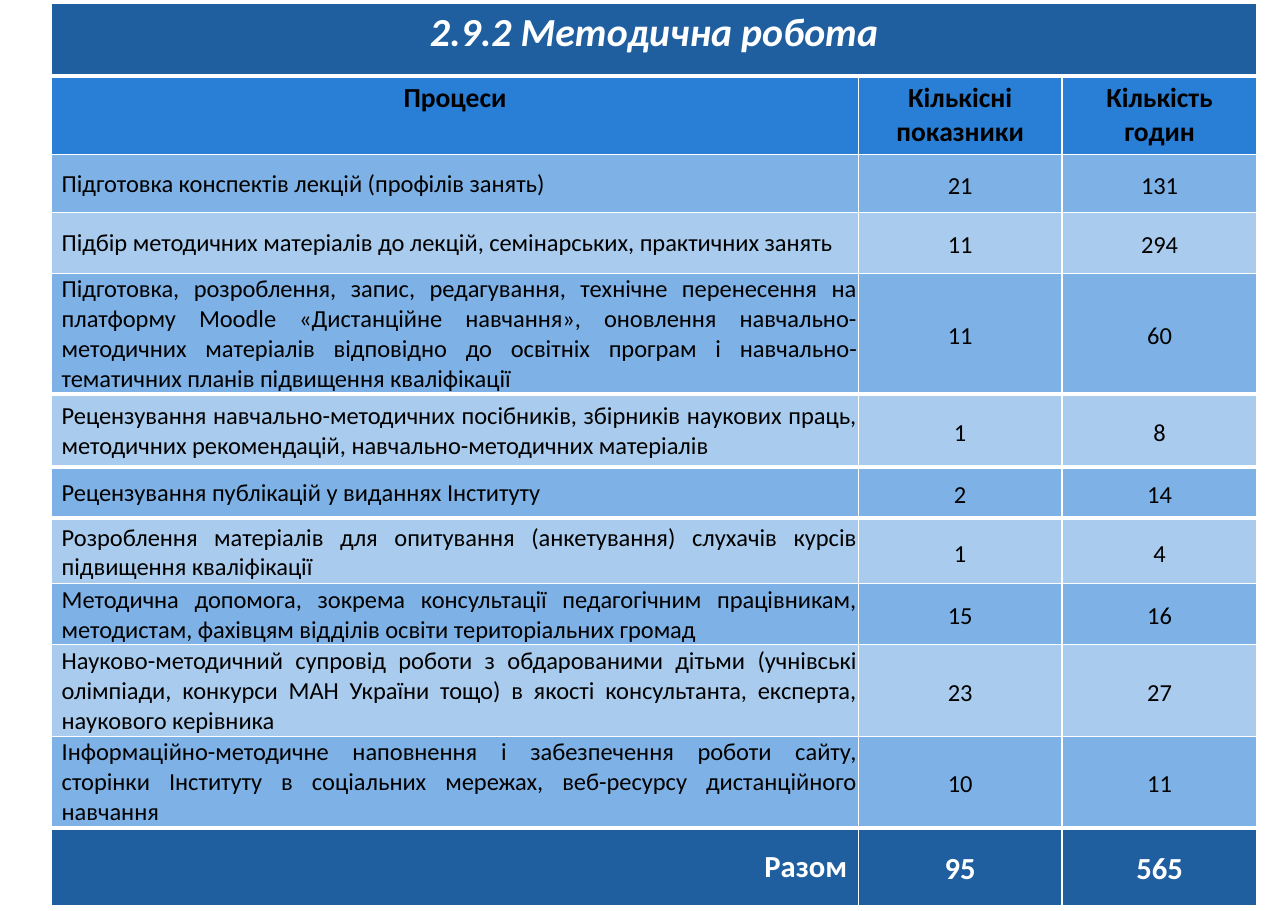
"""Build the slide with the two tables on methodical work."""
from lxml import etree
from pptx import Presentation
from pptx.dml.color import RGBColor
from pptx.enum import text
from pptx.oxml import ns
from pptx.util import Pt

PX = 9144
THEME = {
    "font": "Calibri", "border": "FFFFFF", "dark": "1F5FA0", "bright": "297FD5",
    "bands": ("7EB2E6", "A9CCEE"), "light_text": "FFFFFF", "dark_text": "000000",
    "title": 26, "heading": 18, "body": 16, "total": 20,
}
LEFT, TABLE_TOPS = 47, (3, 530)
COLUMNS = (732, 185, 177)
THICK_EDGES = {1, 5, 6, 7, 11}
DEFAULT_INSETS, HEADING_INSETS = (10, 5, 10, 5), (11, 5, 11, 5)
PROCESS_INSETS, NUMBER_INSETS = (1, 1, 1, 0), (7, 0, 7, 0)

UPPER_ROWS = [
    ("title", 66, ("2.9.2 Методична робота",)),
    ("heading", 71, ("Процеси", "Кількісні показники", "Кількість годин")),
    ("body", 53, ("Підготовка конспектів лекцій (профілів занять)", "21", "131")),
    ("body", 55, ("Підбір методичних матеріалів до лекцій, семінарських, практичних занять", "11", "294")),
    ("body", 109, ("Підготовка, розроблення, запис, редагування, технічне перенесення на платформу Moodle "
                   "«Дистанційне навчання», оновлення навчально-методичних матеріалів відповідно до "
                   "освітніх програм і навчально-тематичних планів підвищення кваліфікації", "11", "60")),
    ("body", 66, ("Рецензування навчально-методичних посібників, збірників наукових праць, "
                  "методичних рекомендацій, навчально-методичних матеріалів", "1", "8")),
    ("body", 47, ("Рецензування публікацій у виданнях Інституту", "2", "14")),
    ("body", 61, ("Розроблення матеріалів для опитування (анкетування) слухачів курсів "
                  "підвищення кваліфікації", "1", "4")),
]
LOWER_ROWS = [
    ("body", 55, ("Методична допомога, зокрема консультації педагогічним працівникам, методистам, "
                  "фахівцям відділів освіти територіальних громад", "15", "16")),
    ("body", 83, ("Науково-методичний супровід роботи з обдарованими дітьми (учнівські олімпіади, "
                  "конкурси МАН України тощо) в якості консультанта, експерта, наукового керівника", "23", "27")),
    ("body", 83, ("Інформаційно-методичне наповнення і забезпечення роботи сайту, сторінки Інституту "
                  "в соціальних мережах, веб-ресурсу дистанційного навчання", "10", "11")),
    ("total", 71, ("Разом", "95", "565")),
]


def paint_cell(cell, fill, edge):
    """Give a cell its white borders and its fill."""
    properties = cell._tc.get_or_add_tcPr()
    widths = {"L": 1, "R": 1, "T": 3 if edge in THICK_EDGES else 1,
              "B": 3 if edge + 1 in THICK_EDGES else 1}
    for side, width in widths.items():
        line = etree.SubElement(properties, ns.qn(f"a:ln{side}"), w=str(Pt(width)))
        solid = etree.SubElement(line, ns.qn("a:solidFill"))
        etree.SubElement(solid, ns.qn("a:srgbClr"), val=THEME["border"])
    cell.fill.solid()
    cell.fill.fore_color.rgb = RGBColor.from_string(fill)


def write_cell(cell, words, kind, column):
    """Set the insets, alignment and text of a cell."""
    para = cell.text_frame.paragraphs[0]
    para.alignment = text.PP_ALIGN.CENTER
    insets = DEFAULT_INSETS
    if kind == "heading":
        insets = HEADING_INSETS
    elif kind in ("body", "total"):
        cell.vertical_anchor = text.MSO_ANCHOR.MIDDLE
        if column:
            insets = NUMBER_INSETS
            para.line_spacing = 1.15
        elif kind == "total":
            para.alignment = text.PP_ALIGN.RIGHT
        else:
            insets = PROCESS_INSETS
            para.alignment = text.PP_ALIGN.JUSTIFY
            indents = para._p.get_or_add_pPr()
            indents.set("marL", str(8 * PX))
            indents.set("indent", "0")
    cell.margin_left, cell.margin_top, cell.margin_right, cell.margin_bottom = (
        inset * PX for inset in insets)
    span = para.add_run()
    span.text = words
    span.font.name = THEME["font"]
    span.font.size = Pt(THEME[kind])
    span.font.bold = kind != "body"
    span.font.italic = kind == "title"
    ink = "light_text" if kind in ("title", "total") else "dark_text"
    span.font.color.rgb = RGBColor.from_string(THEME[ink])


deck = Presentation()
deck.slide_width, deck.slide_height = 1169 * PX, 827 * PX
page = deck.slides.add_slide(deck.slide_layouts[6])

edge = 0
for top, rows in zip(TABLE_TOPS, (UPPER_ROWS, LOWER_ROWS)):
    height = sum(row[1] for row in rows)
    frame = page.shapes.add_table(len(rows), len(COLUMNS), LEFT * PX, top * PX,
                                  sum(COLUMNS) * PX, height * PX)
    table = frame.table
    table.first_row = table.horz_banding = False
    for column, width in zip(table.columns, COLUMNS):
        column.width = width * PX
    for index, (kind, row_height, words) in enumerate(rows):
        table.rows[index].height = row_height * PX
        fill = {"heading": THEME["bright"], "body": THEME["bands"][edge % 2]}.get(kind, THEME["dark"])
        for column in range(len(COLUMNS)):
            paint_cell(table.cell(index, column), fill, edge)
        if kind == "title":
            table.cell(index, 0).merge(table.cell(index, len(COLUMNS) - 1))
        for column, value in enumerate(words):
            write_cell(table.cell(index, column), value, kind, column)
        edge += 1

deck.save("out.pptx")
